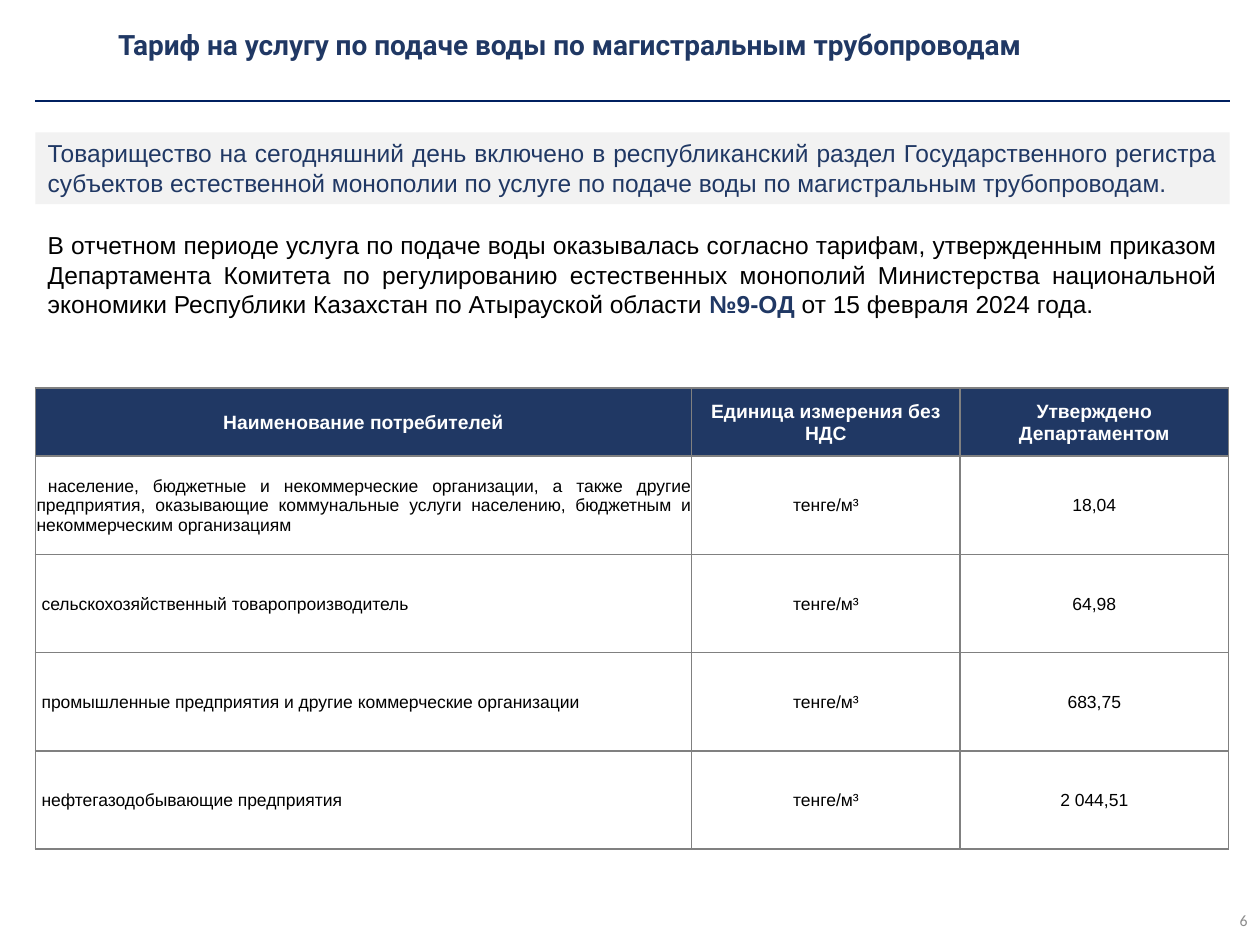
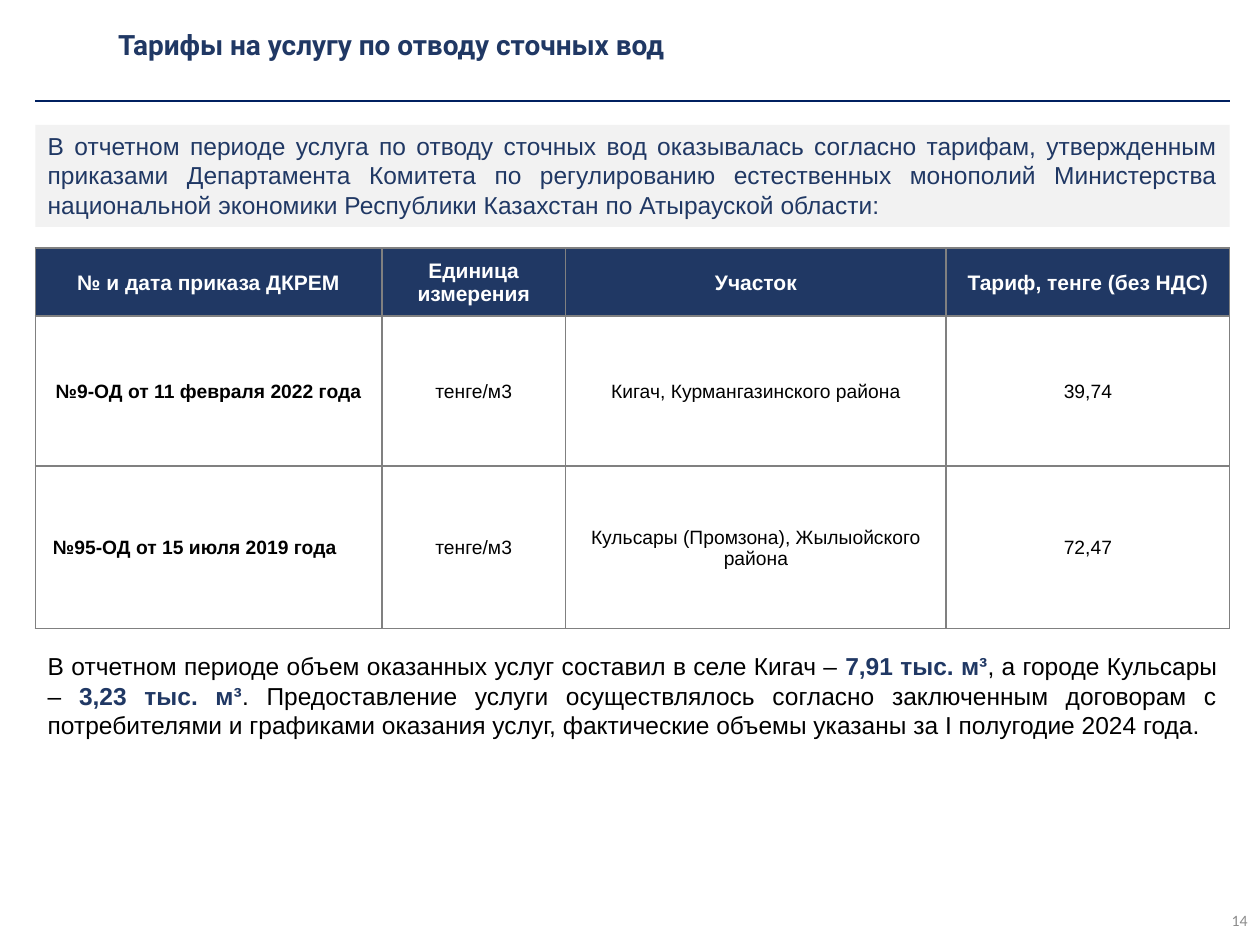
from dataclasses import dataclass

from lxml import etree
from pptx import Presentation
from pptx.dml.color import RGBColor
from pptx.enum.shapes import MSO_CONNECTOR, MSO_SHAPE
from pptx.enum.text import MSO_ANCHOR, MSO_AUTO_SIZE, PP_ALIGN
from pptx.oxml.ns import qn
from pptx.util import Inches, Pt

LEFT, CENTER, RIGHT = PP_ALIGN.LEFT, PP_ALIGN.CENTER, PP_ALIGN.RIGHT
JUSTIFY = PP_ALIGN.JUSTIFY
MIDDLE = MSO_ANCHOR.MIDDLE
GROW = MSO_AUTO_SIZE.SHAPE_TO_FIT_TEXT
RECT = MSO_SHAPE.RECTANGLE
STRAIGHT = MSO_CONNECTOR.STRAIGHT

EDGE, WIDTH = 0.28, 9.48
HEAD_ROW = 0.54


@dataclass(frozen=True)
class Theme:
    navy: str = "203864"
    rule: str = "002060"
    band: str = "F2F2F2"
    grid: str = "808080"
    black: str = "000000"
    white: str = "FFFFFF"
    page: str = "8C8C8C"
    body_font: str = "Arial"
    title_font: str = "Roboto"
    page_font: str = "Calibri"
    title_size: int = 16
    body_size: int = 14
    page_size: int = 9


THEME = Theme()


def rgb(code):
    return RGBColor.from_string(code)


def style(run, size, color, bold=False, font=THEME.body_font):
    run.font.name = font
    run.font.size = Pt(size)
    run.font.bold = bold
    run.font.color.rgb = rgb(color)


def add_text(slide, text, left, top, width, height, align):
    """Add a wrapping text box and return its frame."""
    box = slide.shapes.add_textbox(
        Inches(left), Inches(top), Inches(width), Inches(height))
    frame = box.text_frame
    frame.text = text
    frame.word_wrap = True
    frame.paragraphs[0].alignment = align
    return frame


def add_title(slide, text):
    frame = add_text(slide, text, 0.84, 0.14, 8.93, 0.42, LEFT)
    frame.vertical_anchor = MIDDLE
    style(frame.paragraphs[0].runs[0], THEME.title_size, THEME.navy, True,
          THEME.title_font)


def add_page(slide, number):
    frame = add_text(slide, str(number), 7.75, 7.1, 2.25, 0.4, RIGHT)
    frame.vertical_anchor = MIDDLE
    style(frame.paragraphs[0].runs[0], THEME.page_size, THEME.page,
          font=THEME.page_font)


def add_rule(slide):
    y = Inches(0.8)
    line = slide.shapes.add_connector(
        STRAIGHT, Inches(EDGE), y, Inches(EDGE + WIDTH), y)
    line.line.color.rgb = rgb(THEME.rule)
    line.line.width = Pt(1)
    etree.SubElement(line._element.spPr, qn("a:effectLst"))


def add_band(slide, text, top, height):
    band = slide.shapes.add_shape(
        RECT, Inches(EDGE), Inches(top), Inches(WIDTH), Inches(height))
    band.shadow.inherit = False
    band.fill.solid()
    band.fill.fore_color.rgb = rgb(THEME.band)
    band.line.fill.background()
    frame = band.text_frame
    frame.text = text
    frame.word_wrap = True
    frame.auto_size = GROW
    frame.vertical_anchor = MSO_ANCHOR.TOP
    frame.paragraphs[0].alignment = JUSTIFY
    style(frame.paragraphs[0].runs[0], THEME.body_size, THEME.navy)


def add_body(slide, parts, top):
    """Add a paragraph whose every second part is bold and navy."""
    frame = add_text(slide, "", EDGE, top, WIDTH, 0.81, JUSTIFY)
    frame.auto_size = GROW
    for i, part in enumerate(parts):
        run = frame.paragraphs[0].add_run()
        run.text = part
        strong = i % 2 == 1
        style(run, THEME.body_size, THEME.navy if strong else THEME.black,
              strong)


def add_grid(cell):
    props = cell._tc.get_or_add_tcPr()
    for side in ("lnL", "lnR", "lnT", "lnB"):
        line = etree.SubElement(props, qn("a:" + side), w=str(Pt(1)))
        fill = etree.SubElement(line, qn("a:solidFill"))
        etree.SubElement(fill, qn("a:srgbClr"), val=THEME.grid)


def fill_cell(cell, text, size, color, back, bold=False):
    cell.text = text
    cell.vertical_anchor = MIDDLE
    cell.margin_left = cell.margin_right = cell.margin_top = Inches(0.01)
    cell.margin_bottom = 0
    add_grid(cell)
    cell.fill.solid()
    cell.fill.fore_color.rgb = rgb(back)
    para = cell.text_frame.paragraphs[0]
    para.alignment = CENTER
    style(para.runs[0], size, color, bold)


def indent(cell, first):
    """Justify the cell and set back its first line."""
    para = cell.text_frame.paragraphs[0]
    para.alignment = JUSTIFY
    para._p.get_or_add_pPr().set("indent", str(Inches(first)))


def add_table(slide, rows, top, cols, heights, head_size, bold_first=False):
    frame = slide.shapes.add_table(
        len(rows), len(cols), Inches(EDGE), Inches(top),
        Inches(WIDTH), Inches(sum(heights)))
    table = frame.table
    for col, width in zip(table.columns, cols):
        col.width = Inches(width)
    for row, height in zip(table.rows, heights):
        row.height = Inches(height)
    for r, row in enumerate(rows):
        for c, text in enumerate(row):
            cell = table.cell(r, c)
            if r == 0:
                fill_cell(cell, text, head_size, THEME.white, THEME.navy, True)
            else:
                fill_cell(cell, text, head_size - 1, THEME.black, THEME.white,
                          bold_first and c == 0)
    return table


def add_slide(deck, title, page):
    slide = deck.slides.add_slide(deck.slide_layouts[6])
    add_title(slide, title)
    add_rule(slide)
    add_page(slide, page)
    return slide


def water_slide(deck):
    slide = add_slide(
        deck, "Тариф на услугу по подаче воды по магистральным трубопроводам",
        6)
    add_band(
        slide,
        "Товарищество на сегодняшний день включено в республиканский раздел "
        "Государственного регистра субъектов естественной монополии по услуге "
        "по подаче воды по магистральным трубопроводам.", 1.05, 0.57)
    add_body(slide, [
        "В отчетном периоде услуга по подаче воды оказывалась согласно "
        "тарифам, утвержденным приказом Департамента Комитета по "
        "регулированию естественных монополий Министерства национальной "
        "экономики Республики Казахстан по Атырауской области ",
        "№9-ОД ",
        "от 15 февраля 2024 года."], 1.78)
    unit = "тенге/м³"
    rows = [
        ("Наименование потребителей", "Единица измерения без НДС",
         "Утверждено Департаментом"),
        ("население, бюджетные и некоммерческие организации, а также другие "
         "предприятия, оказывающие коммунальные услуги населению, бюджетным "
         "и некоммерческим организациям", unit, "18,04"),
        ("сельскохозяйственный товаропроизводитель", unit, "64,98"),
        ("промышленные предприятия и другие коммерческие организации", unit,
         "683,75"),
        ("нефтегазодобывающие предприятия", unit, "2 044,51"),
    ]
    table = add_table(slide, rows, 3.08, [5.21, 2.13, 2.13],
                      [HEAD_ROW] + [0.78] * 4, 11)
    for r in range(1, len(rows)):
        indent(table.cell(r, 0), 0.09 if r == 1 else 0.04)


def waste_slide(deck):
    slide = add_slide(deck, "Тарифы на услугу по отводу сточных вод", 14)
    add_band(
        slide,
        "В отчетном периоде услуга по отводу сточных вод оказывалась согласно "
        "тарифам, утвержденным приказами Департамента Комитета по "
        "регулированию естественных монополий Министерства национальной "
        "экономики Республики Казахстан по Атырауской области:", 0.99, 0.81)
    unit = "тенге/м3"
    rows = [
        ("№ и дата приказа ДКРЕМ", "Единица измерения", "Участок",
         "Тариф, тенге (без НДС)"),
        ("№9-ОД от 11 февраля 2022 года", unit,
         "Кигач, Курмангазинского района", "39,74"),
        ("№95-ОД от 15 июля 2019 года", unit,
         "Кульсары (Промзона), Жылыойского района", "72,47"),
    ]
    table = add_table(slide, rows, 1.97, [2.75, 1.46, 3.02, 2.25],
                      [HEAD_ROW, 1.19, 1.29], 12, bold_first=True)
    indent(table.cell(2, 0), 0.13)
    add_body(slide, [
        "В отчетном периоде объем оказанных услуг составил в селе Кигач – ",
        "7,91 тыс. м³",
        ", а городе Кульсары – ",
        "3,23 тыс. м³",
        ". Предоставление услуги осуществлялось согласно заключенным "
        "договорам с потребителями и графиками оказания услуг, фактические "
        "объемы указаны за I полугодие 2024 года."], 5.12)


def main():
    deck = Presentation()
    deck.slide_width = Inches(10)
    deck.slide_height = Inches(7.5)
    water_slide(deck)
    waste_slide(deck)
    deck.save("out.pptx")


if __name__ == "__main__":
    main()
